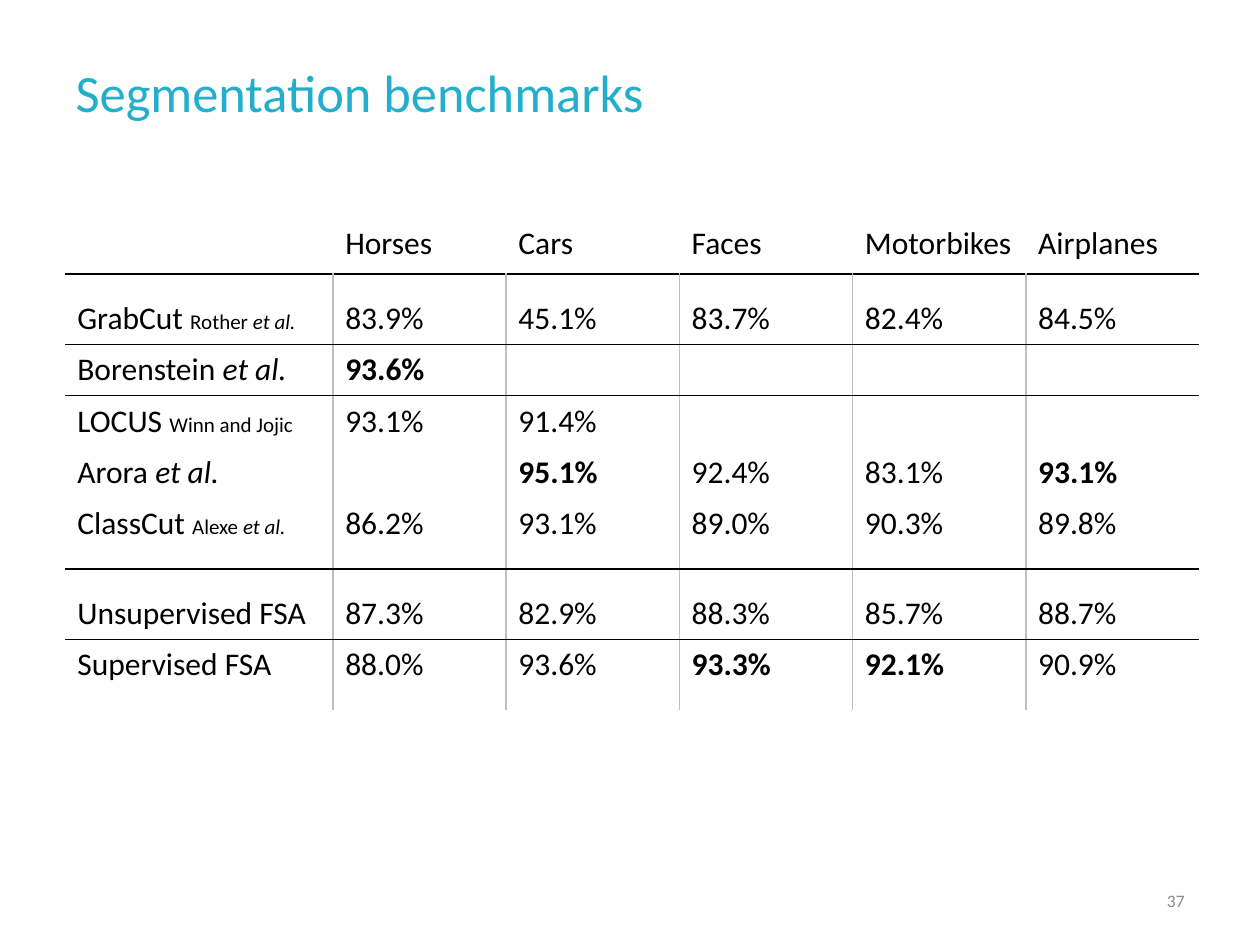
from dataclasses import dataclass

from lxml import etree
from pptx import Presentation
from pptx.dml.color import RGBColor
from pptx.enum.text import MSO_ANCHOR, PP_ALIGN
from pptx.oxml.ns import qn
from pptx.util import Cm, Pt

LEFT, RIGHT = PP_ALIGN.LEFT, PP_ALIGN.RIGHT
TOP, MIDDLE = MSO_ANCHOR.TOP, MSO_ANCHOR.MIDDLE
TITLE_ONLY = 5
NO_TABLE_STYLE = "{2D5ABB26-0587-4C30-8999-92F81FD0307C}"


@dataclass(frozen=True)
class Theme:
    """Colours, font and type sizes of the slide."""
    font: str = "Calibri"
    accent: str = "23AFCB"
    ink: str = "000000"
    muted: str = "8C8C8C"
    grid: str = "BFBFBF"
    title: int = 30
    body: int = 18
    citation: int = 12
    footer: int = 10
    rule: int = 1


THEME = Theme()

CATEGORIES = ["Horses", "Cars", "Faces", "Motorbikes", "Airplanes"]
RESULTS = [
    ("GrabCut ", "Rother ", "et al.", ["83.9%", "45.1%", "83.7%", "82.4%", "84.5%"]),
    ("Borenstein ", "", "et al.", ["93.6%", "", "", "", ""]),
    ("LOCUS ", "Winn and Jojic", "", ["93.1%", "91.4%", "", "", ""]),
    ("Arora ", "", "et al.", ["", "95.1%", "92.4%", "83.1%", "93.1%"]),
    ("ClassCut ", "Alexe ", "et al.", ["86.2%", "93.1%", "89.0%", "90.3%", "89.8%"]),
    ("Unsupervised FSA", "", "", ["87.3%", "82.9%", "88.3%", "85.7%", "88.7%"]),
    ("Supervised FSA", "", "", ["88.0%", "93.6%", "93.3%", "92.1%", "90.9%"]),
]
BEST = [max(scores) for scores in zip(*(result[3] for result in RESULTS))]

RULED_BELOW = {0, 1, 5}
PADDED_ABOVE = {1, 6}
PADDED_BELOW = {5, 7}
HEADER_HEIGHT, ROW_HEIGHT, PADDED_HEIGHT = Cm(1.2), Cm(1.03), Cm(1.42)
LABEL_WIDTH = Cm(5.4)
SIDE_INSET, INSET, PADDED_INSET = Cm(0.25), Cm(0.13), Cm(0.51)


def style(paragraph, size, color, align=LEFT, bold=False):
    """Give a paragraph its font and alignment."""
    paragraph.alignment = align
    font = paragraph.font
    font.name, font.size, font.bold = THEME.font, Pt(size), bold
    font.color.rgb = RGBColor.from_string(color)


def add_title(slide, text, box):
    """Place and format the title placeholder."""
    title = slide.shapes.title
    title.left, title.top, title.width, title.height = box
    title.text_frame.text = text
    title.text_frame.vertical_anchor = MIDDLE
    style(title.text_frame.paragraphs[0], THEME.title, THEME.accent)


def add_page_number(slide, number, box):
    """Write the page number at the right of its box."""
    frame = slide.shapes.add_textbox(*box).text_frame
    frame.word_wrap = True
    frame.vertical_anchor = MIDDLE
    frame.text = str(number)
    style(frame.paragraphs[0], THEME.footer, THEME.muted, RIGHT)


def add_border(cell, side, color):
    """Draw one side of a cell."""
    line = etree.SubElement(cell._tc.get_or_add_tcPr(), qn(f"a:ln{side}"), w=str(Pt(THEME.rule)))
    fill = etree.SubElement(line, qn("a:solidFill"))
    etree.SubElement(fill, qn("a:srgbClr"), val=color)


def format_cell(cell, row, column):
    """Set the insets, rules and fill that follow from a cell's place."""
    cell.margin_left = cell.margin_right = SIDE_INSET
    cell.margin_top = PADDED_INSET if row in PADDED_ABOVE else INSET
    cell.margin_bottom = PADDED_INSET if row in PADDED_BELOW else INSET
    cell.vertical_anchor = TOP if row else MIDDLE
    borders = [
        ("L", THEME.grid, row > 0 and column > 0),
        ("R", THEME.grid, row > 0 and column < len(CATEGORIES)),
        ("T", THEME.ink, row - 1 in RULED_BELOW),
        ("B", THEME.ink, row in RULED_BELOW),
    ]
    for side, color, shown in borders:
        if shown:
            add_border(cell, side, color)
    cell.fill.background()


def write_method(cell, name, authors, et_al):
    """Write a method with its citation, smaller where authors are named."""
    paragraph = cell.text_frame.paragraphs[0]
    style(paragraph, THEME.body, THEME.ink)
    paragraph.add_run().text = name
    for text, italic in ((authors, None), (et_al, True)):
        if text:
            run = paragraph.add_run()
            run.text = text
            run.font.italic = italic
            if authors:
                run.font.size = Pt(THEME.citation)


def write_value(cell, text, bold=False):
    """Write a heading or a score."""
    cell.text = text
    style(cell.text_frame.paragraphs[0], THEME.body, THEME.ink, bold=bold)


def add_benchmarks(slide, box):
    """Build the table of scores by method and category."""
    left, top, width, height = box
    table = slide.shapes.add_table(
        len(RESULTS) + 1, len(CATEGORIES) + 1, left, top, width, height).table
    table.horz_banding = False
    table._tbl.tblPr.find(qn("a:tableStyleId")).text = NO_TABLE_STYLE

    score_width = (width - LABEL_WIDTH) // len(CATEGORIES)
    for index, column in enumerate(table.columns):
        column.width = score_width if index else LABEL_WIDTH
    for index, row in enumerate(table.rows):
        padded = index in PADDED_ABOVE | PADDED_BELOW
        row.height = PADDED_HEIGHT if padded else ROW_HEIGHT if index else HEADER_HEIGHT
        for position, cell in enumerate(row.cells):
            format_cell(cell, index, position)

    write_value(table.cell(0, 0), "")
    for column, category in enumerate(CATEGORIES, 1):
        write_value(table.cell(0, column), category)
    for row, (name, authors, et_al, scores) in enumerate(RESULTS, 1):
        write_method(table.cell(row, 0), name, authors, et_al)
        for column, (score, best) in enumerate(zip(scores, BEST), 1):
            write_value(table.cell(row, column), score, score == best)


def main():
    """Build and save the slide."""
    deck = Presentation()
    deck.slide_width, deck.slide_height = Cm(25.4), Cm(19.05)
    slide = deck.slides.add_slide(deck.slide_layouts[TITLE_ONLY])
    add_title(slide, "Segmentation benchmarks", (Cm(1.27), Cm(0.76), Cm(22.86), Cm(2.16)))
    add_benchmarks(slide, (Cm(1.31), Cm(4.32), Cm(22.86), Cm(9.97)))
    add_page_number(slide, 37, (Cm(18.2), Cm(17.65), Cm(5.93), Cm(1.02)))
    deck.save("out.pptx")


if __name__ == "__main__":
    main()
